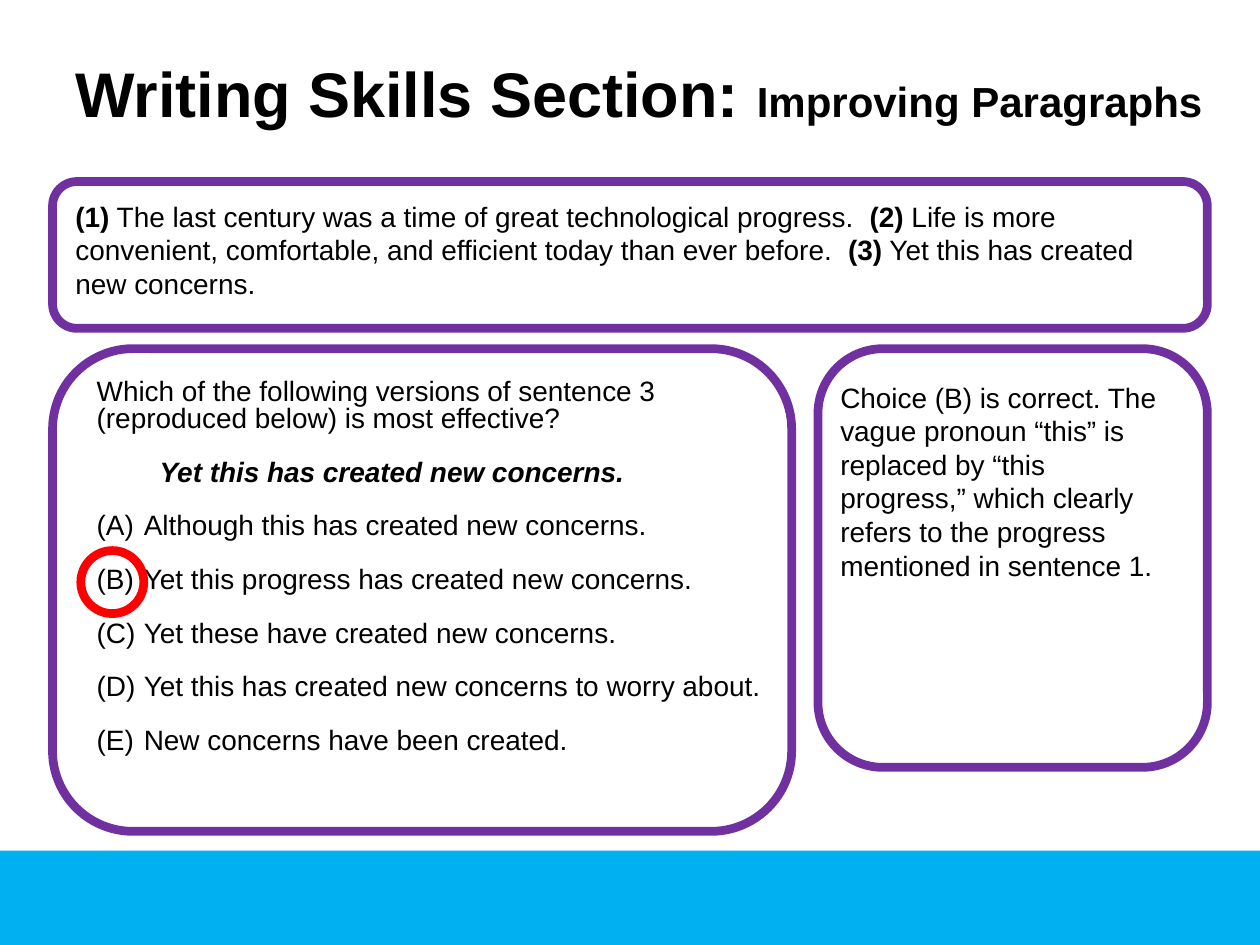
from dataclasses import dataclass

from lxml.etree import SubElement
from pptx import Presentation
from pptx.dml.color import RGBColor
from pptx.enum.shapes import MSO_SHAPE
from pptx.oxml.ns import qn
from pptx.util import Cm, Pt


@dataclass(frozen=True)
class Theme:
    font: str = "Arial"
    ink: RGBColor = RGBColor(0, 0, 0)
    paper: RGBColor = RGBColor(255, 255, 255)
    frame: RGBColor = RGBColor(0x70, 0x30, 0xA0)
    mark: RGBColor = RGBColor(255, 0, 0)
    band: RGBColor = RGBColor(0, 0xB0, 0xF0)
    title: int = 36
    subtitle: int = 24
    body: int = 16
    stroke: int = 5


class SlideBuilder:
    """Draws the elements of one slide in the style of a theme."""

    def __init__(self, slide, theme):
        self.slide = slide
        self.theme = theme

    def outline(self, kind, box, line=None, fill=None, opacity=None):
        shape = self.slide.shapes.add_shape(kind, *map(Cm, box))
        shape.shadow.inherit = False
        if fill is None:
            shape.fill.background()
        else:
            shape.fill.solid()
            shape.fill.fore_color.rgb = fill
        if opacity is not None:
            color = shape.fill._xPr.find(qn("a:solidFill"))[0]
            SubElement(color, qn("a:alpha"), val=str(opacity * 1000))
        if line is None:
            shape.line.fill.background()
        else:
            shape.line.color.rgb = line
            shape.line.width = Pt(self.theme.stroke)

    def panel(self, box, **fill):
        self.outline(MSO_SHAPE.ROUNDED_RECTANGLE, box, self.theme.frame, **fill)

    def text_box(self, box):
        frame = self.slide.shapes.add_textbox(*map(Cm, box)).text_frame
        frame.word_wrap = True
        return frame

    def style(self, paragraph, size, bold=None, italic=None):
        font = paragraph.font
        font.name, font.size = self.theme.font, Pt(size)
        font.bold, font.italic = bold, italic
        font.color.rgb = self.theme.ink

    def title(self, box, heading, topic):
        paragraph = self.text_box(box).paragraphs[0]
        self.style(paragraph, self.theme.title, bold=True)
        paragraph.add_run().text = heading
        subtitle = paragraph.add_run()
        subtitle.text = topic
        subtitle.font.size = Pt(self.theme.subtitle)

    def passage(self, box, sentences):
        paragraph = self.text_box(box).paragraphs[0]
        self.style(paragraph, self.theme.body)
        for number, sentence in enumerate(sentences, 1):
            label = paragraph.add_run()
            label.text = f"({number})"
            label.font.bold = True
            paragraph.add_run().text = f" {sentence}"

    def note(self, box, text):
        paragraph = self.text_box(box).paragraphs[0]
        paragraph.text = text
        self.style(paragraph, self.theme.body)

    def question(self, box, prompt, quote, choices):
        frame = self.text_box(box)
        for position, text in enumerate([prompt, quote, *choices]):
            paragraph = frame.add_paragraph() if position else frame.paragraphs[0]
            paragraph.text = text
            paragraph.line_spacing = 0.8
            if position:
                paragraph.space_before = Pt(15.3)
            properties = paragraph._p.get_or_add_pPr()
            if position == 1:
                properties.set("marL", str(Cm(1.27)))
            elif position > 1:
                properties.set("marL", str(Cm(0.95)))
                properties.set("indent", str(Cm(-0.95)))
                SubElement(properties, qn("a:buFont"), typeface=self.theme.font)
                SubElement(properties, qn("a:buAutoNum"), type="alphaUcParenBoth")
            emphasis = position == 1 or None
            self.style(paragraph, self.theme.body, emphasis, emphasis)


def main():
    deck = Presentation()
    deck.slide_width, deck.slide_height = Cm(25.4), Cm(19.05)
    theme = Theme()
    page = SlideBuilder(deck.slides.add_slide(deck.slide_layouts[6]), theme)

    page.outline(MSO_SHAPE.RECTANGLE, (0, 17.15, 25.4, 1.9), fill=theme.band)
    page.panel((1.06, 3.66, 23.28, 2.96))
    page.passage((1.27, 3.89, 22.43, 2.31), [
        "The last century was a time of great technological progress.  ",
        "Life is more convenient, comfortable, and efficient today than ever before.  ",
        "Yet this has created new concerns.",
    ])
    page.panel((16.49, 7.03, 7.85, 8.44), fill=theme.paper, opacity=85)
    page.note(
        (16.69, 7.54, 7.01, 4.37),
        "Choice (B) is correct. The vague pronoun “this” is replaced by “this progress,” "
        "which clearly refers to the progress mentioned in sentence 1.",
    )
    page.panel((1.06, 7.03, 14.9, 9.73), fill=theme.paper, opacity=85)
    page.question(
        (1.7, 7.54, 14.81, 7.92),
        "Which of the following versions of sentence 3 (reproduced below) is most effective?",
        "Yet this has created new concerns.",
        [
            "Although this has created new concerns.",
            "Yet this progress has created new concerns.",
            "Yet these have created new concerns.",
            "Yet this has created new concerns to worry about.",
            "New concerns have been created.",
        ],
    )
    page.outline(MSO_SHAPE.OVAL, (1.63, 11.1, 1.27, 1.27), theme.mark)
    page.title((1.27, 0.97, 23.65, 2.69), "Writing Skills Section: ", "Improving Paragraphs")

    deck.save("out.pptx")


if __name__ == "__main__":
    main()
